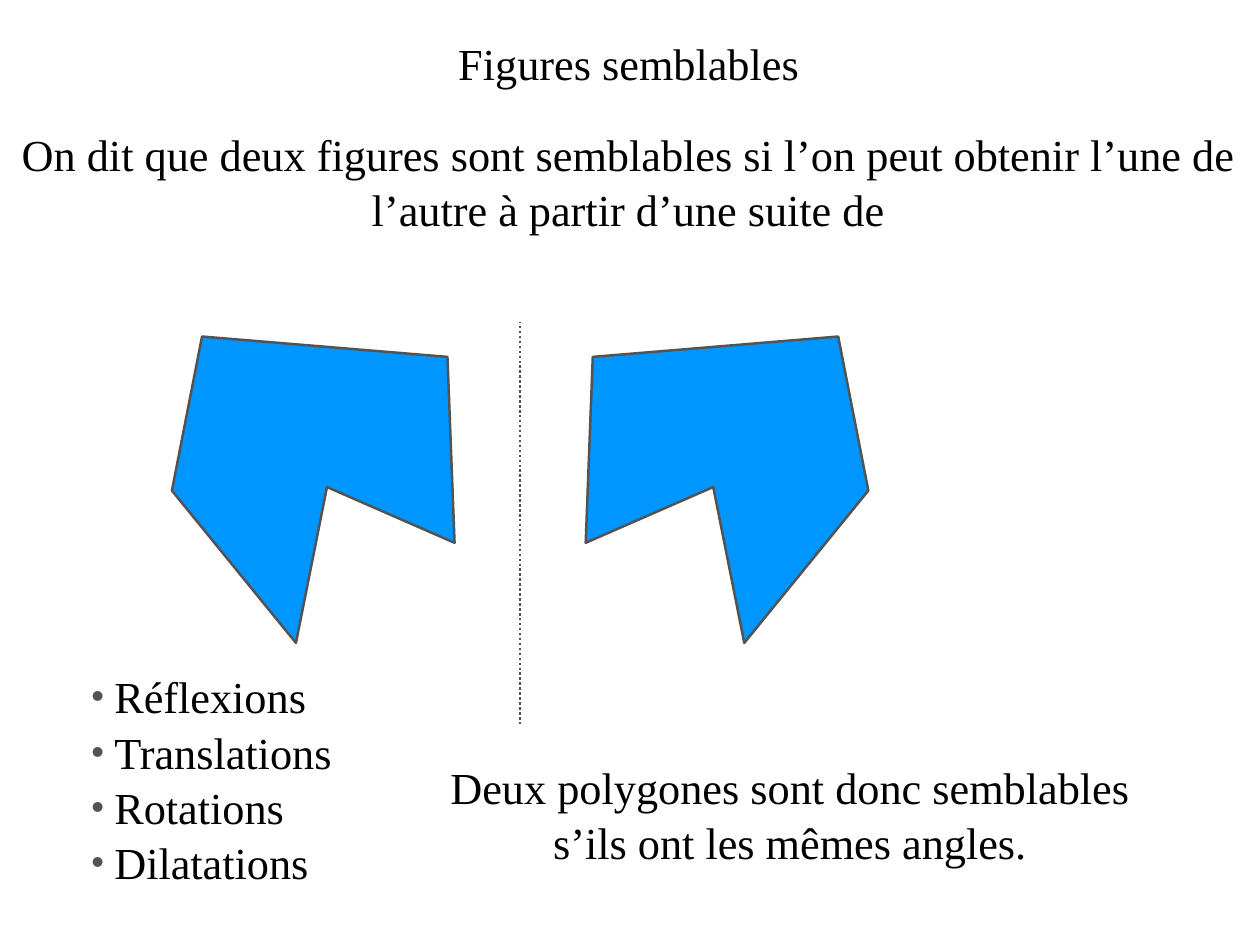
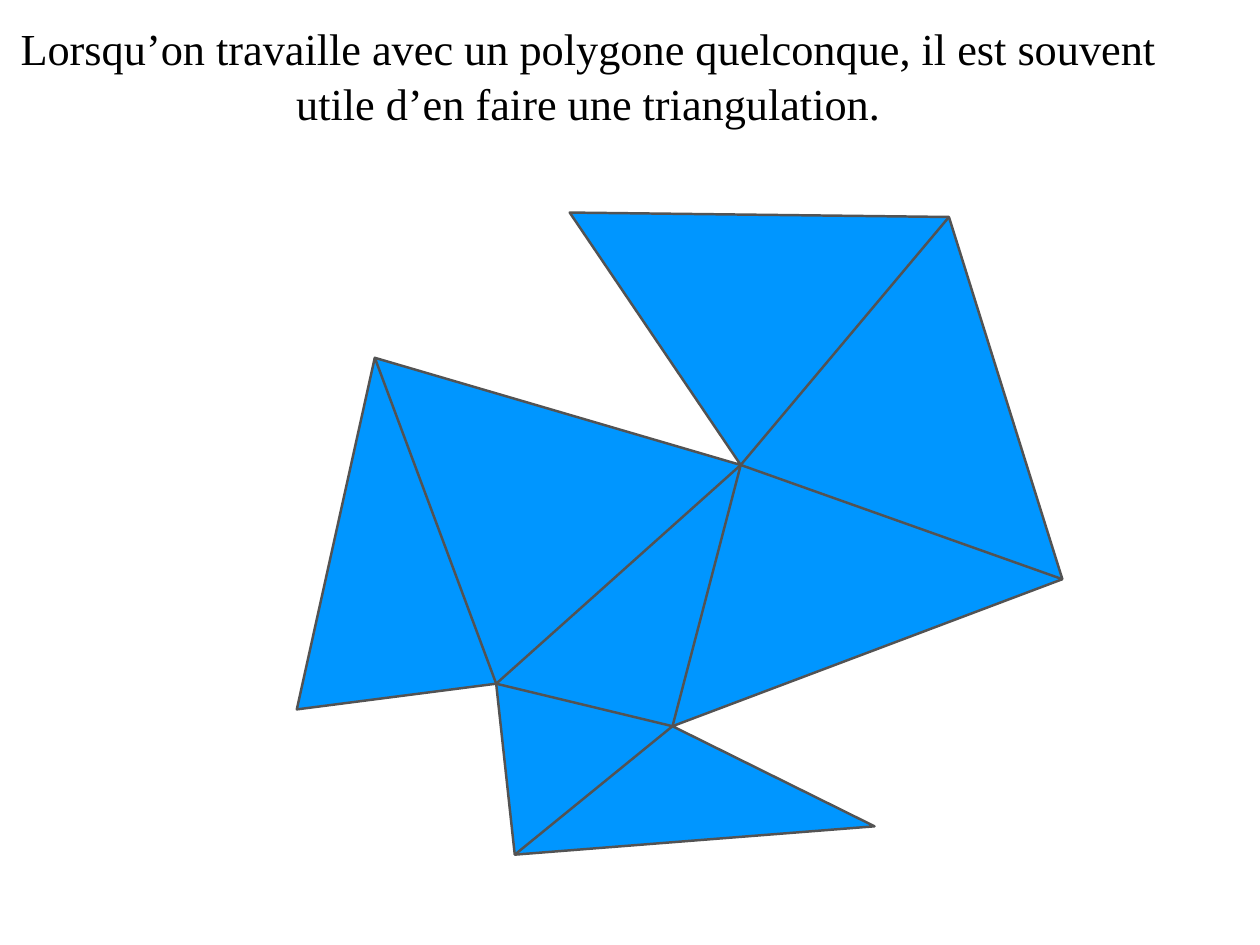
"""Build two slides on similar figures and the triangulation of a polygon."""
from lxml import etree
from pptx import Presentation
from pptx.dml.color import RGBColor
from pptx.enum.dml import MSO_LINE
from pptx.enum.shapes import MSO_CONNECTOR
from pptx.enum.text import MSO_ANCHOR, MSO_AUTO_SIZE, PP_ALIGN
from pptx.oxml.ns import qn
from pptx.util import Inches, Pt

STRAIGHT = MSO_CONNECTOR.STRAIGHT
DOTTED = MSO_LINE.ROUND_DOT
MIDDLE = MSO_ANCHOR.MIDDLE
NO_AUTOFIT = MSO_AUTO_SIZE.NONE
CENTER, LEFT = PP_ALIGN.CENTER, PP_ALIGN.LEFT

BLUE = RGBColor(0x00, 0x96, 0xFF)
GRAY = RGBColor(0x53, 0x53, 0x53)
BLACK = RGBColor(0x00, 0x00, 0x00)
FONT = "Times New Roman"
TEXT_SIZE = Pt(36)
LINE_WIDTH = Pt(2)
LINE_SPACING = 1.04
INSET = Inches(0.06)
BULLET_INDENT = Inches(0.26)
TITLE_AND_BODY, TITLE_ONLY = 1, 5

SIMILAR_TITLE = ["Figures semblables"]
DEFINITION = ["On dit que deux figures sont semblables si l’on peut obtenir "
              "l’une de l’autre à partir d’une suite de"]
TRANSFORMATIONS = ["Réflexions", "Translations", "Rotations", "Dilatations"]
CONCLUSION = ["Deux polygones sont donc semblables", "s’ils ont les mêmes angles."]
TRIANGULATION_TITLE = ["Lorsqu’on travaille avec un polygone quelconque, il est souvent "
                       "utile d’en faire une triangulation."]

MIRROR_X = 5.87
MIRROR_TOP, MIRROR_BOTTOM = 3.64, 8.18
FIGURE = [(1.94, 5.54), (2.28, 3.8), (5.05, 4.03), (5.13, 6.13), (3.69, 5.5), (3.34, 7.26)]

POLYGON = {
    "A": (8.36, 5.25), "B": (4.23, 4.04), "C": (3.35, 8.01), "D": (5.6, 7.72),
    "E": (5.81, 9.65), "F": (9.87, 9.33), "G": (7.59, 8.2), "H": (11.99, 6.54),
    "I": (10.71, 2.45), "J": (6.43, 2.4),
}
DIAGONALS = ["AI", "AH", "GA", "DB", "DA", "DG", "EG"]


def add_bullet(para):
    properties = para._p.get_or_add_pPr()
    properties.set("marL", str(BULLET_INDENT))
    properties.set("indent", str(-BULLET_INDENT))
    color = etree.SubElement(properties, qn("a:buClr"))
    etree.SubElement(color, qn("a:srgbClr"), val=str(GRAY))
    etree.SubElement(properties, qn("a:buSzPct"), val="82000")
    etree.SubElement(properties, qn("a:buChar"), char="•")


def write_text(box, lines, at, align=CENTER, bullets=False):
    box.left, box.top, box.width, box.height = (Inches(length) for length in at)
    frame = box.text_frame
    frame.word_wrap = True
    frame.auto_size = NO_AUTOFIT
    frame.vertical_anchor = MIDDLE
    frame.margin_left = frame.margin_right = INSET
    frame.margin_top = frame.margin_bottom = INSET
    for index, line in enumerate(lines):
        para = frame.add_paragraph() if index else frame.paragraphs[0]
        para.alignment = align
        para.line_spacing = LINE_SPACING
        para.space_before = para.space_after = Pt(0)
        if bullets:
            add_bullet(para)
        span = para.add_run()
        span.text = line
        span.font.name = FONT
        span.font.size = TEXT_SIZE
        span.font.color.rgb = BLACK


def add_text(page, lines, at, **text_format):
    write_text(page.shapes.add_textbox(0, 0, 0, 0), lines, at, **text_format)


def style_line(line):
    line.color.rgb = GRAY
    line.width = LINE_WIDTH


def add_polygon(page, points):
    corners = [(Inches(x), Inches(y)) for x, y in points]
    builder = page.shapes.build_freeform(*corners[0])
    builder.add_line_segments(corners[1:], close=True)
    polygon = builder.convert_to_shape()
    polygon.shadow.inherit = False
    polygon.fill.solid()
    polygon.fill.fore_color.rgb = BLUE
    style_line(polygon.line)


def add_segment(page, start, end, dash=None):
    segment = page.shapes.add_connector(
        STRAIGHT, *(Inches(length) for length in (*start, *end)))
    style_line(segment.line)
    if dash:
        segment.line.dash_style = dash
    etree.SubElement(segment._element.spPr, qn("a:effectLst"))


def build_similar_figures(deck):
    page = deck.slides.add_slide(deck.slide_layouts[TITLE_AND_BODY])
    add_polygon(page, FIGURE)
    add_polygon(page, [(2 * MIRROR_X - x, y) for x, y in FIGURE])
    add_segment(page, (MIRROR_X, MIRROR_BOTTOM), (MIRROR_X, MIRROR_TOP), dash=DOTTED)
    write_text(page.shapes.title, SIMILAR_TITLE, (5.1, 0.36, 3.99, 0.68))
    write_text(page.placeholders[1], TRANSFORMATIONS, (0.97, 7.59, 2.97, 2.39),
               align=LEFT, bullets=True)
    add_text(page, DEFINITION, (0.09, 1.41, 14, 1.25))
    add_text(page, CONCLUSION, (4.95, 8.56, 7.93, 1.25))


def build_triangulation(deck):
    page = deck.slides.add_slide(deck.slide_layouts[TITLE_ONLY])
    write_text(page.shapes.title, TRIANGULATION_TITLE, (0.08, 0.21, 13.12, 1.25))
    add_polygon(page, list(POLYGON.values()))
    for start, end in DIAGONALS:
        add_segment(page, POLYGON[start], POLYGON[end])


def main():
    deck = Presentation()
    deck.slide_width, deck.slide_height = Inches(14.22), Inches(10.67)
    build_similar_figures(deck)
    build_triangulation(deck)
    deck.save("out.pptx")


if __name__ == "__main__":
    main()
